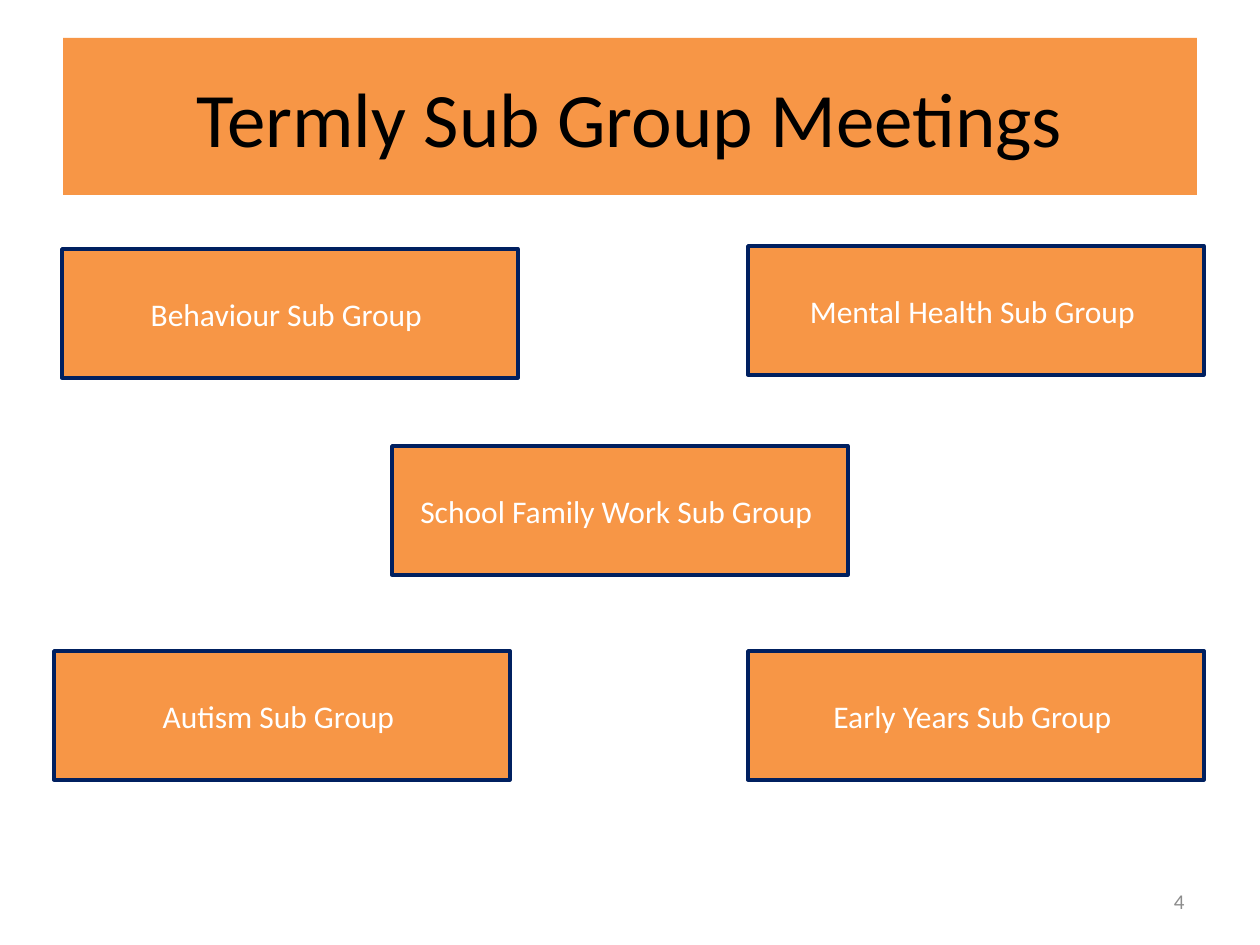
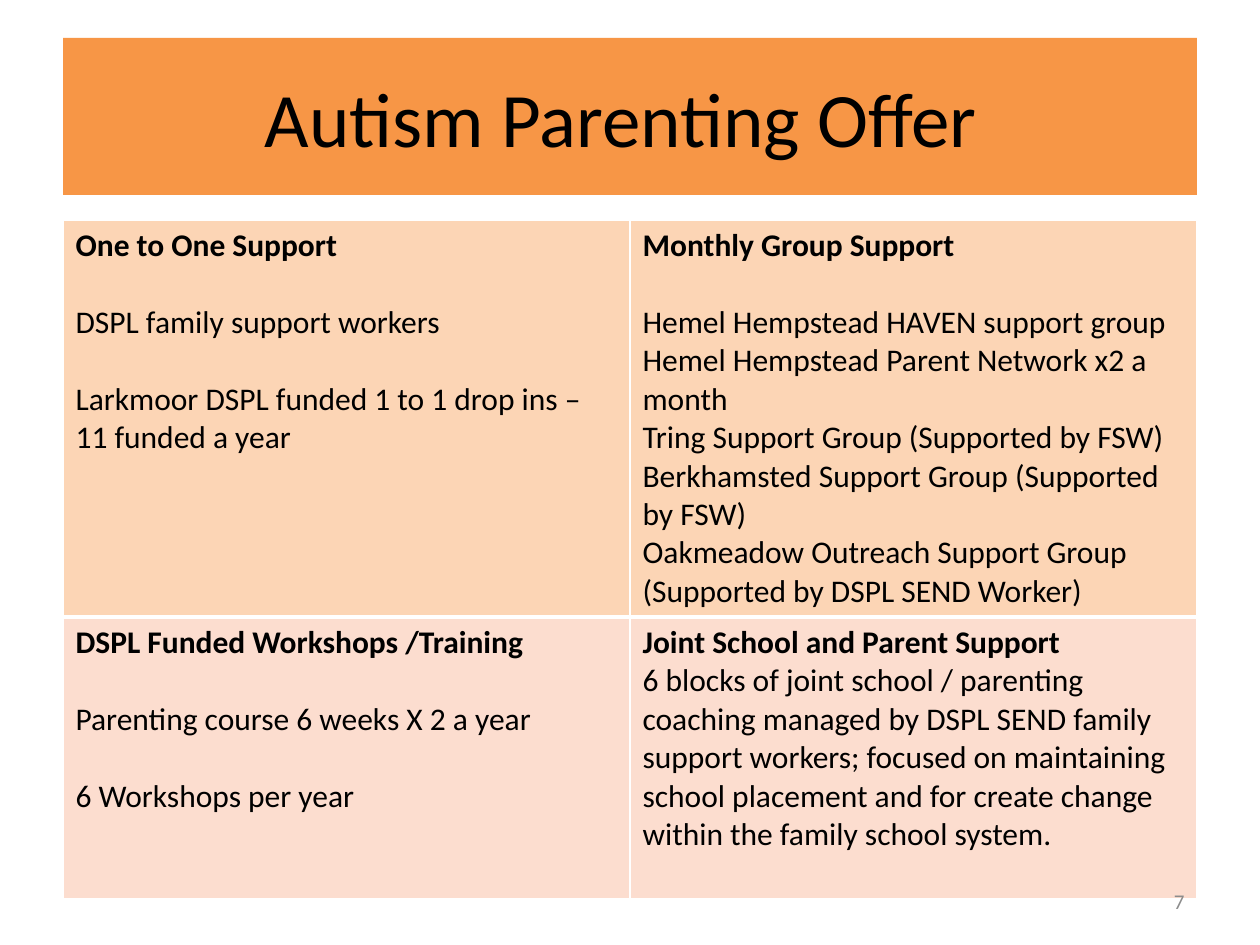
import lxml.etree
import pptx
import pptx.dml.color
import pptx.enum.shapes
import pptx.enum.text
import pptx.oxml.ns
import pptx.util

PX_PER_INCH = 126
FONT = "Calibri"
ORANGE = "F79646"
NAVY = "002060"
PEACH = "FCD5B5"
PINK = "FCDDCF"
BLACK = "000000"
WHITE = "FFFFFF"
GREY = "8C8C8C"
BODY_SIZE = 18
BLANK_LINE = 22
ALIGN = pptx.enum.text.PP_ALIGN
MIDDLE = pptx.enum.text.MSO_ANCHOR.MIDDLE

SUB_GROUPS = [
    ("Behaviour Sub Group ", 62, 249),
    ("School Family Work Sub Group ", 392, 446),
    ("Early Years Sub Group ", 748, 651),
    ("Autism Sub Group ", 54, 651),
    ("Mental Health Sub Group ", 748, 246),
]

OFFERS = [
    [
        ("One to One Support", [
            ("DSPL family support workers", True),
            ("Larkmoor DSPL funded 1 to 1 drop ins – 11 funded a year", True),
        ]),
        ("Monthly Group Support", [
            ("Hemel Hempstead HAVEN support group", True),
            ("Hemel Hempstead Parent Network x2 a month", False),
            ("Tring Support Group (Supported by FSW)", False),
            ("Berkhamsted Support Group (Supported by FSW)", False),
            ("Oakmeadow Outreach Support Group (Supported by DSPL SEND Worker)", False),
        ]),
    ],
    [
        ("DSPL Funded Workshops /Training", [
            ("Parenting course 6 weeks X 2 a year", True),
            ("6 Workshops per year", True),
        ]),
        ("Joint School and Parent Support", [
            ("6 blocks of joint school / parenting coaching managed by DSPL SEND "
             "family support workers; focused on maintaining school placement and "
             "for create change within the family school system.", False),
        ]),
    ],
]


def px(length):
    return pptx.util.Emu(round(length * 914400 / PX_PER_INCH))


def box(*lengths):
    return [px(length) for length in lengths]


def rgb(colour):
    return pptx.dml.color.RGBColor.from_string(colour)


def fill_with(target, colour):
    target.fill.solid()
    target.fill.fore_color.rgb = rgb(colour)


def write(paragraph, wording, size, colour, align=ALIGN.LEFT, bold=False):
    paragraph.text = wording
    paragraph.alignment = align
    paragraph.font.name = FONT
    paragraph.font.size = pptx.util.Pt(size)
    paragraph.font.bold = bold
    paragraph.font.color.rgb = rgb(colour)


def add_page(deck, heading):
    page = deck.slides.add_slide(deck.slide_layouts[5])
    banner = page.shapes.title
    banner.left, banner.top, banner.width, banner.height = box(63, 38, 1134, 157)
    fill_with(banner, ORANGE)
    banner.text_frame.vertical_anchor = MIDDLE
    write(banner.text_frame.paragraphs[0], heading, 44, BLACK, ALIGN.CENTER)
    return page


def add_page_number(page, number):
    footer = page.shapes.add_textbox(*box(903, 876, 294, 50)).text_frame
    footer.word_wrap = True
    footer.vertical_anchor = MIDDLE
    write(footer.paragraphs[0], number, 12, GREY, ALIGN.RIGHT)


def add_sub_group(page, label, left, top):
    card = page.shapes.add_shape(
        pptx.enum.shapes.MSO_SHAPE.RECTANGLE, *box(left, top, 456, 129))
    card.shadow.inherit = False
    fill_with(card, ORANGE)
    card.line.color.rgb = rgb(NAVY)
    card.line.width = pptx.util.Pt(2)
    card.text_frame.word_wrap = True
    card.text_frame.vertical_anchor = MIDDLE
    write(card.text_frame.paragraphs[0], label, BODY_SIZE, WHITE, ALIGN.CENTER)


def set_borders(cell, colour, **widths):
    properties = cell._tc.get_or_add_tcPr()
    qn = pptx.oxml.ns.qn
    for position, (side, width) in enumerate(widths.items()):
        border = lxml.etree.Element(qn(f"a:ln{side}"), w=str(pptx.util.Pt(width)))
        solid = lxml.etree.SubElement(border, qn("a:solidFill"))
        lxml.etree.SubElement(solid, qn("a:srgbClr"), val=colour)
        properties.insert(position, border)


def fill_offer(cell, heading, lines, colour):
    fill_with(cell, colour)
    write(cell.text_frame.paragraphs[0], heading, BODY_SIZE, BLACK, bold=True)
    for line, spaced in lines:
        paragraph = cell.text_frame.add_paragraph()
        write(paragraph, line, BODY_SIZE, BLACK)
        if spaced:
            paragraph.space_before = pptx.util.Pt(BLANK_LINE)


def add_offer_table(page):
    offers = page.shapes.add_table(2, 2, *box(63, 220, 1134, 679)).table
    offers.first_row = offers.horz_banding = False
    row_styles = [(397, PEACH, 1, 3), (282, PINK, 3, 1)]
    for row, (height, colour, above, below) in enumerate(row_styles):
        offers.rows[row].height = px(height)
        for column, (heading, lines) in enumerate(OFFERS[row]):
            cell = offers.cell(row, column)
            fill_offer(cell, heading, lines, colour)
            set_borders(cell, WHITE, L=1, R=1, T=above, B=below)


def main():
    deck = pptx.Presentation()
    deck.slide_width, deck.slide_height = box(1260, 945)

    meetings = add_page(deck, "Termly Sub Group Meetings")
    add_page_number(meetings, "4")
    for sub_group in SUB_GROUPS:
        add_sub_group(meetings, *sub_group)

    parenting = add_page(deck, "Autism Parenting Offer ")
    add_offer_table(parenting)
    add_page_number(parenting, "7")

    deck.save("out.pptx")


if __name__ == "__main__":
    main()
